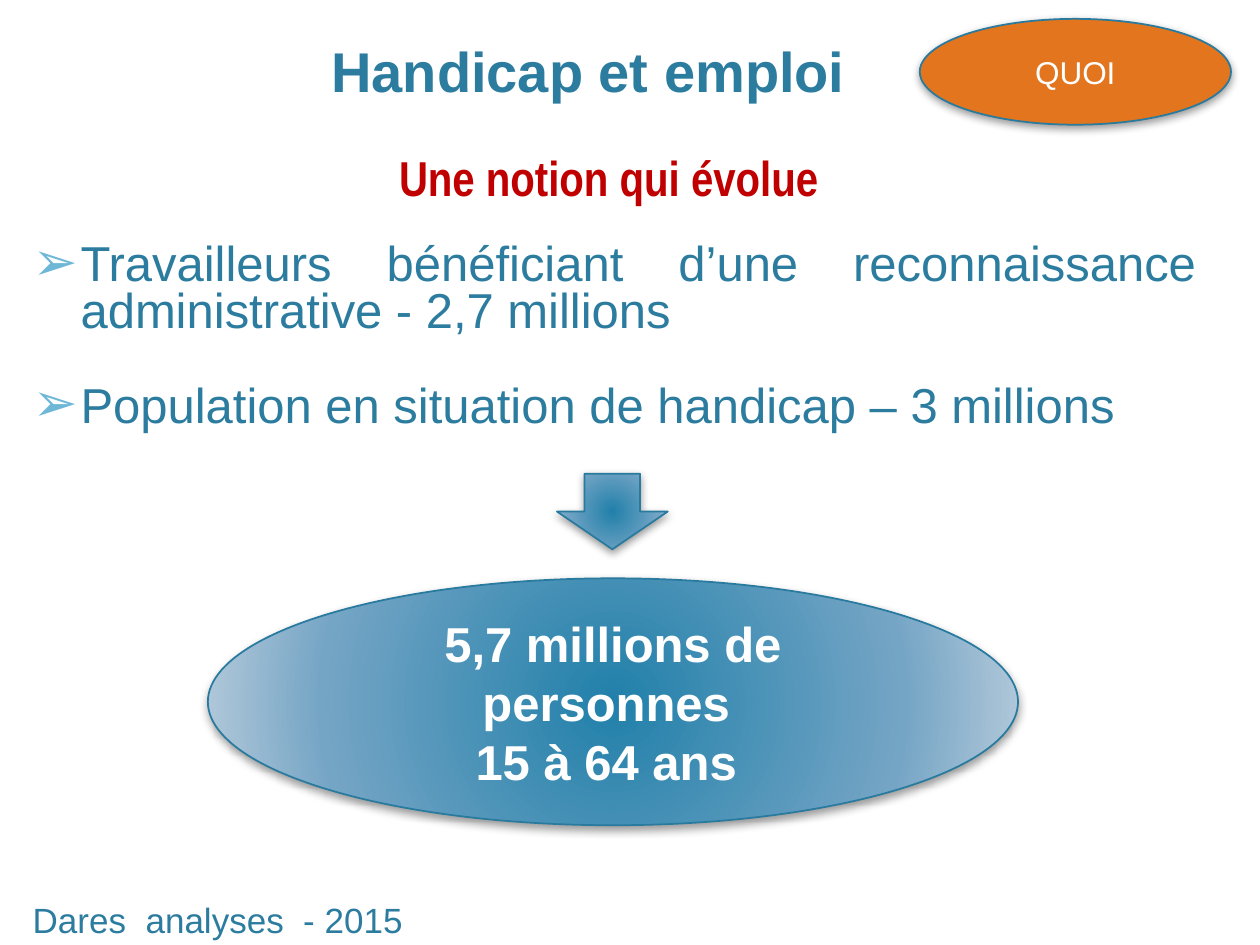
from lxml import etree
from pptx import Presentation
from pptx.dml.color import RGBColor
from pptx.enum import shapes, text
from pptx.oxml import ns
from pptx.util import Inches, Pt

COLORS = {
    "teal": "2C7C9F",
    "outline": "287A9E",
    "red": "C00000",
    "orange": "E2751D",
    "white": "FFFFFF",
    "bullet": "6FB7D7",
    "shadow": "000000",
}
GLOW = ((0, "2180AA"), (69, "75A5C5"), (100, "B8CCDC"))


def rgb(name):
    return RGBColor.from_string(COLORS[name])


def add_node(parent, tag, **attributes):
    node = etree.SubElement(parent, ns.qn(tag))
    for key, value in attributes.items():
        node.set(key, str(value))
    return node


def style_para(para, size, color, bold=False, font="Arial", align=text.PP_ALIGN.CENTER):
    para.alignment = align
    for span in para.runs:
        span.font.name = font
        span.font.size = Pt(size)
        span.font.bold = bold
        span.font.color.rgb = rgb(color)


def add_text_box(page, box, inset):
    frame = page.shapes.add_textbox(*map(Inches, box)).text_frame
    frame.word_wrap = True
    frame.margin_left = frame.margin_right = Inches(inset)
    frame.margin_top = frame.margin_bottom = Inches(0.05)
    return frame


def add_bullet(para):
    props = para._p.get_or_add_pPr()
    props.set("marL", str(Inches(0.38)))
    props.set("indent", str(-Inches(0.38)))
    color = add_node(props, "a:buClr")
    add_node(color, "a:srgbClr", val=COLORS["bullet"])
    add_node(props, "a:buSzPct", val=110000)
    add_node(props, "a:buFont", typeface="Wingdings 3")
    props[-1].set("typeface", "Arial")
    add_node(props, "a:buChar", char="➢")


def add_glow(shape):
    props = shape._element.spPr
    fill = etree.Element(ns.qn("a:gradFill"), rotWithShape="1")
    stops = add_node(fill, "a:gsLst")
    for position, color in GLOW:
        stop = add_node(stops, "a:gs", pos=position * 1000)
        add_node(stop, "a:srgbClr", val=color)
    gradient = add_node(fill, "a:path", path="circle")
    add_node(gradient, "a:fillToRect", l=100000, t=100000, r=100000, b=100000)
    props.find(ns.qn("a:prstGeom")).addnext(fill)


def add_shadow(shape):
    shape.shadow.inherit = False
    effects = shape._element.spPr.find(ns.qn("a:effectLst"))
    shadow = add_node(effects, "a:outerShdw", blurRad=Pt(5), dist=Pt(2),
                      dir=5400000, rotWithShape=0)
    color = add_node(shadow, "a:srgbClr", val=COLORS["shadow"])
    add_node(color, "a:alpha", val=40000)


def add_figure(page, kind, box, fill=None):
    shape = page.shapes.add_shape(kind, *map(Inches, box))
    if fill:
        shape.fill.solid()
        shape.fill.fore_color.rgb = rgb(fill)
    else:
        add_glow(shape)
    shape.line.color.rgb = rgb("outline")
    shape.line.width = Pt(1)
    add_shadow(shape)
    return shape


def add_ellipse(page, box, wording, size, bold=False, fill=None):
    frame = add_figure(page, shapes.MSO_SHAPE.OVAL, box, fill).text_frame
    frame.vertical_anchor = text.MSO_ANCHOR.MIDDLE
    frame.text = wording
    for para in frame.paragraphs:
        style_para(para, size, "white", bold)


def add_title(page, box):
    frame = add_text_box(page, box, 0.1)
    frame.text = "Handicap et emploi"
    style_para(frame.paragraphs[0], 32, "teal", bold=True)


def add_body(page, box):
    frame = add_text_box(page, box, 0.05)
    frame.text = (
        "Une notion qui évolue \n"
        "Travailleurs bénéficiant d’une reconnaissance administrative - 2,7 millions\n"
        "Population en situation de handicap – 3 millions"
    )
    heading, *items = frame.paragraphs
    style_para(heading, 28, "red", bold=True, font="Arial Narrow")
    heading.line_spacing = 0.8
    for para, gap in zip(items, (22, 27)):
        style_para(para, 28, "teal", align=text.PP_ALIGN.JUSTIFY)
        para.line_spacing = 0.8
        para.space_before = Pt(gap)
        add_bullet(para)


def add_source(page, box):
    frame = add_text_box(page, box, 0.05)
    frame.text = "Dares  analyses  - 2015"
    style_para(frame.paragraphs[0], 20, "teal", align=text.PP_ALIGN.LEFT)


def main():
    deck = Presentation()
    deck.slide_width, deck.slide_height = Inches(10), Inches(7.5)
    page = deck.slides.add_slide(deck.slide_layouts[6])
    add_title(page, (0.34, 0.24, 8.66, 0.64))
    add_body(page, (0.21, 1.21, 9.33, 2.4))
    add_source(page, (0.21, 7.08, 9.33, 0.4))
    add_ellipse(page, (1.65, 4.59, 6.43, 1.96),
                "5,7 millions de personnes \n15 à 64 ans ", 28, bold=True)
    add_figure(page, shapes.MSO_SHAPE.DOWN_ARROW, (4.42, 3.76, 0.88, 0.6))
    add_ellipse(page, (7.3, 0.15, 2.47, 0.84), "QUOI", 18, fill="orange")
    deck.save("out.pptx")


if __name__ == "__main__":
    main()
